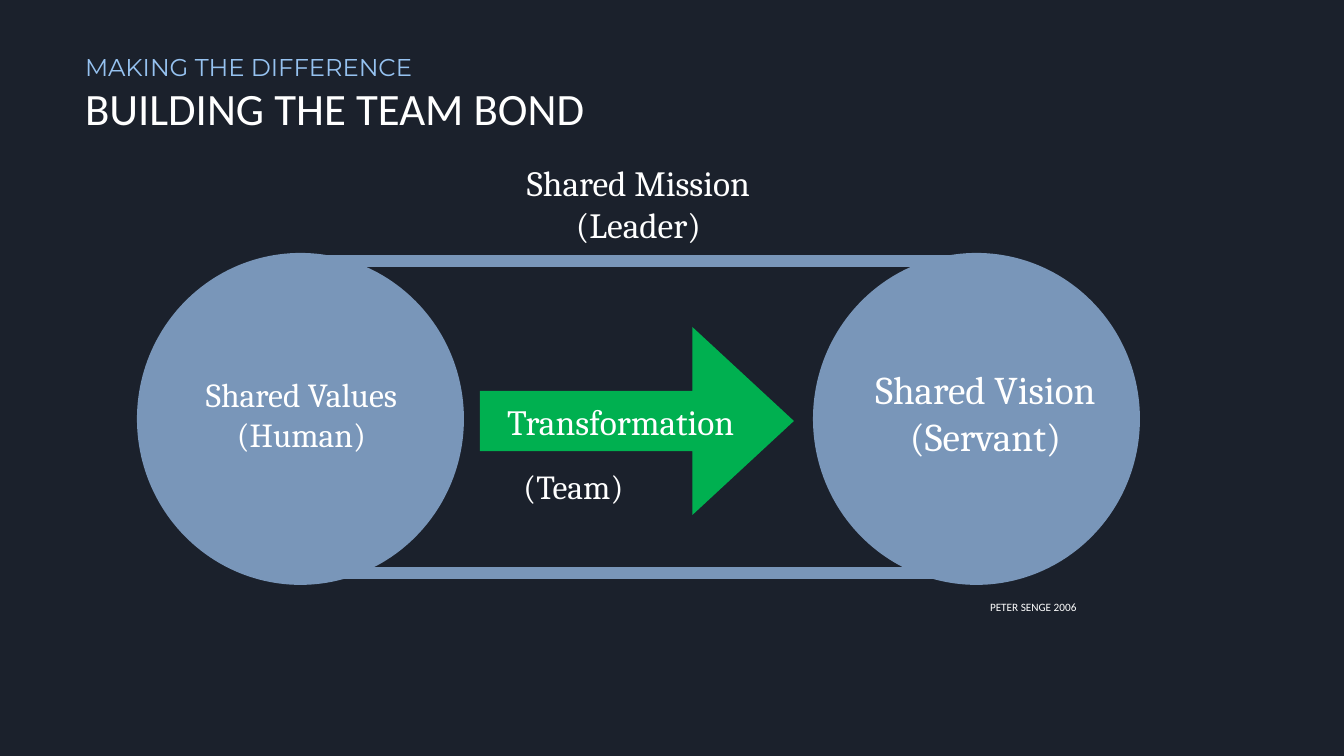
from dataclasses import dataclass

from lxml.etree import SubElement
from pptx import Presentation
from pptx.dml.color import RGBColor
from pptx.enum.shapes import MSO_CONNECTOR, MSO_SHAPE
from pptx.enum.text import MSO_ANCHOR, PP_ALIGN
from pptx.oxml.ns import qn
from pptx.shapes.autoshape import Shape
from pptx.slide import Slide
from pptx.util import Emu, Pt

PIXEL = 914400 / 134.4


@dataclass(frozen=True)
class Theme:
    background: str = "1B212C"
    accent: str = "96C2F0"
    wheel: str = "7996B9"
    arrow: str = "00B050"
    text: str = "FFFFFF"
    display: str = "Montserrat"
    sans: str = "Calibri"
    serif: str = "Cambria"
    kicker: int = 13
    heading: int = 24
    vision: int = 21
    label: int = 19
    note: int = 18
    credit: int = 6
    belt: int = 6


THEME = Theme()


@dataclass(frozen=True)
class Area:
    left: int
    top: int
    width: int
    height: int


@dataclass(frozen=True)
class Belt:
    start: int
    end: int
    height: int


@dataclass(frozen=True)
class Label:
    area: Area
    lines: tuple[str, ...]
    size: int
    font: str = THEME.serif
    color: str = THEME.text
    align: PP_ALIGN = PP_ALIGN.CENTER
    anchor: MSO_ANCHOR = MSO_ANCHOR.TOP
    inset: int = 4
    spacing: float = 1.0


WHEELS = [Area(left, 253, 327, 332) for left in (137, 813)]
BELTS = [Belt(271, 986, 573), Belt(306, 972, 261)]
ARROW = Label(Area(480, 327, 314, 188), ("Transformation",), THEME.label,
              anchor=MSO_ANCHOR.MIDDLE)
LABELS = [
    Label(Area(81, 48, 1207, 63), ("MAKING THE DIFFERENCE",), THEME.kicker,
          THEME.display, THEME.accent, PP_ALIGN.LEFT),
    Label(Area(81, 77, 1207, 63), ("BUILDING THE TEAM BOND",), THEME.heading,
          THEME.sans, align=PP_ALIGN.LEFT),
    Label(Area(155, 315, 293, 198), ("Shared Values", "(Human)"), THEME.note,
          anchor=MSO_ANCHOR.MIDDLE),
    Label(Area(851, 358, 269, 108), ("Shared Vision", "(Servant)"), THEME.vision,
          anchor=MSO_ANCHOR.MIDDLE),
    Label(Area(418, 148, 441, 113), ("Shared Mission", "(Leader)"), THEME.label,
          inset=13),
    Label(Area(353, 453, 441, 67), ("(Team)",), THEME.note, inset=13),
    Label(Area(986, 599, 210, 28), ("PETER SENGE 2006",), THEME.credit,
          THEME.sans, align=PP_ALIGN.LEFT, spacing=0.8),
]


def px(value: int) -> Emu:
    return Emu(round(value * PIXEL))


def place(area: Area) -> tuple[Emu, ...]:
    return px(area.left), px(area.top), px(area.width), px(area.height)


def write_text(box: Shape, label: Label) -> None:
    frame = box.text_frame
    frame_format = {"word_wrap": True, "vertical_anchor": label.anchor}
    for side in ("left", "top", "right", "bottom"):
        frame_format[f"margin_{side}"] = px(label.inset)
    for name, value in frame_format.items():
        setattr(frame, name, value)
    for index, line in enumerate(label.lines):
        para = frame.add_paragraph() if index else frame.paragraphs[0]
        para.alignment = label.align
        para.line_spacing = label.spacing
        span = para.add_run()
        span.text = line
        for name, value in {"name": label.font, "size": Pt(label.size)}.items():
            setattr(span.font, name, value)
        span.font.color.rgb = RGBColor.from_string(label.color)


def draw_shape(page: Slide, kind: MSO_SHAPE, area: Area, color: str) -> Shape:
    shape = page.shapes.add_shape(kind, *place(area))
    shape.shadow.inherit = False
    shape.fill.solid()
    shape.fill.fore_color.rgb = RGBColor.from_string(color)
    shape.line.fill.background()
    return shape


def draw_belt(page: Slide, belt: Belt) -> None:
    line = page.shapes.add_connector(
        MSO_CONNECTOR.STRAIGHT, px(belt.start), px(belt.height),
        px(belt.end), px(belt.height))
    line.line.color.rgb = RGBColor.from_string(THEME.wheel)
    line.line.width = Pt(THEME.belt)
    SubElement(line._element.spPr, qn("a:effectLst"))


def draw_arrow(page: Slide, label: Label) -> None:
    arrow = draw_shape(page, MSO_SHAPE.RIGHT_ARROW, label.area, THEME.arrow)
    for index, value in enumerate((0.32, 0.54)):
        arrow.adjustments[index] = value
    write_text(arrow, label)


def draw_label(page: Slide, label: Label) -> None:
    write_text(page.shapes.add_textbox(*place(label.area)), label)


def main() -> None:
    deck = Presentation()
    deck.slide_width, deck.slide_height = px(1344), px(756)
    page = deck.slides.add_slide(deck.slide_layouts[6])
    page.background.fill.solid()
    page.background.fill.fore_color.rgb = RGBColor.from_string(THEME.background)
    for wheel in WHEELS:
        draw_shape(page, MSO_SHAPE.OVAL, wheel, THEME.wheel)
    for belt in BELTS:
        draw_belt(page, belt)
    draw_arrow(page, ARROW)
    for label in LABELS:
        draw_label(page, label)
    deck.save("out.pptx")


if __name__ == "__main__":
    main()
